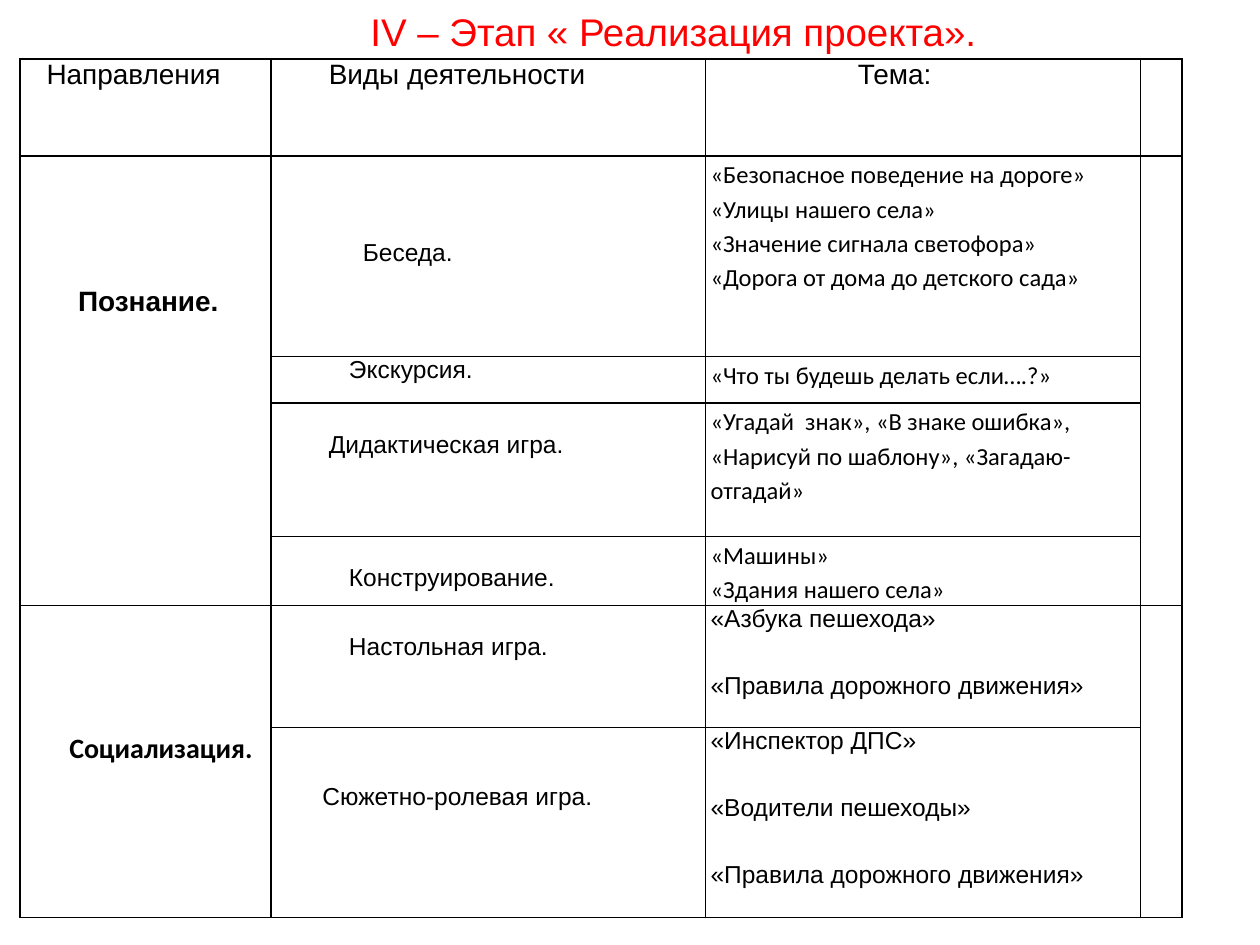
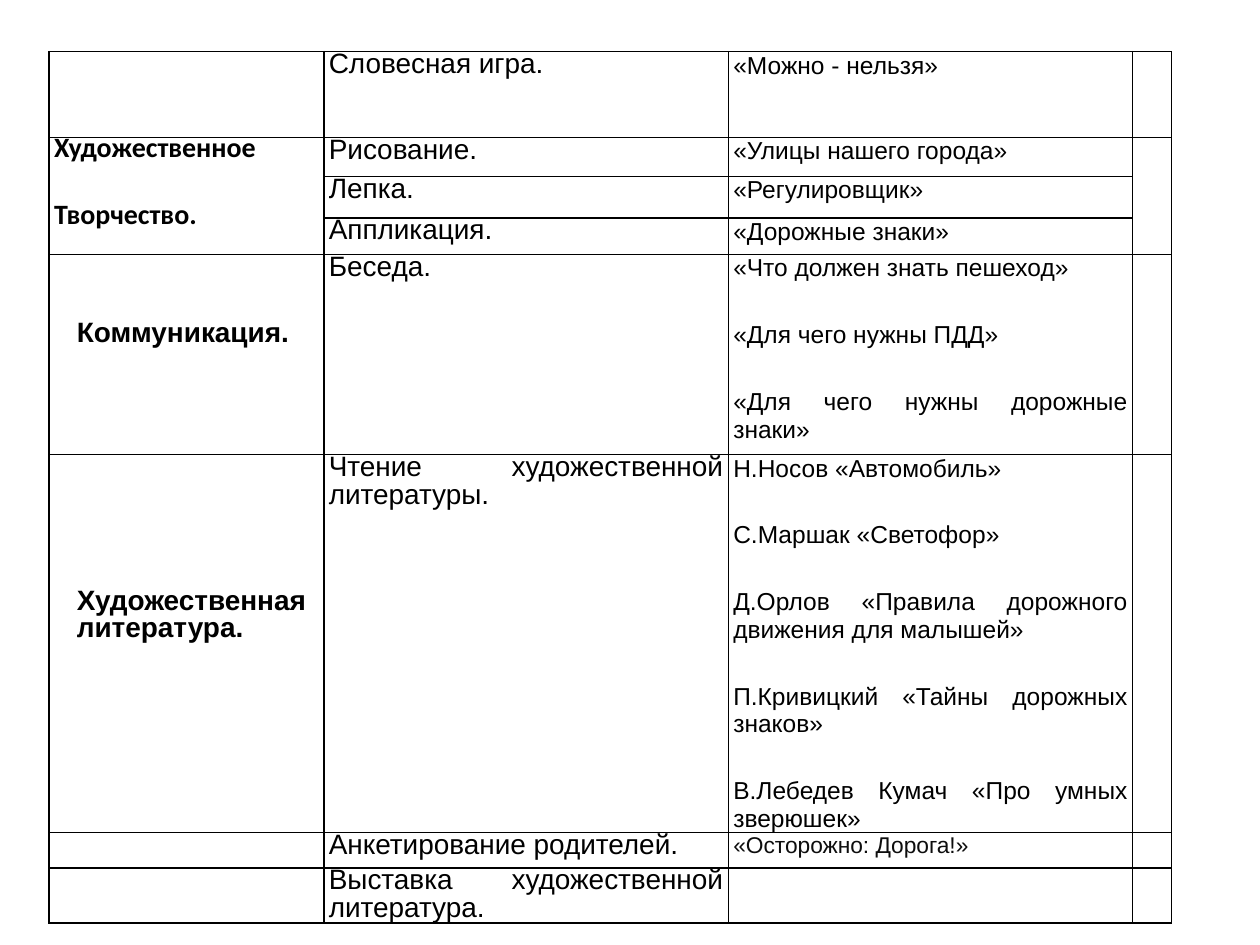
"""Build two slides that tabulate the activities of a road safety project."""
from lxml import etree
from pptx import Presentation, util as u
from pptx.dml.color import RGBColor
from pptx.enum import text
from pptx.oxml import ns

COLS, ROWS = 1000, 750
BLACK, RED, SOFT_BLACK = "000000", "FF0000", "0D0D0D"
JUSTIFY, LEFT = text.PP_ALIGN.JUSTIFY, text.PP_ALIGN.LEFT

EXACT = {"alignment": JUSTIFY, "line_spacing": u.Pt(15.8)}
GAPS = {"space_before": u.Pt(11.2), "space_after": u.Pt(11.2)}
LOOSE = {"alignment": JUSTIFY, **GAPS}
SPACED = {**EXACT, **GAPS}
LINES = {"alignment": LEFT, "line_spacing": 1.15}


def font(size, name="Arial", bold=False):
    return {"size": u.Pt(size), "name": name, "bold": bold}


STYLES = {
    "title": ({"alignment": LEFT}, font(22), RED),
    "head": (LOOSE, font(16), BLACK),
    "area": (SPACED, font(16, bold=True), BLACK),
    "area_calibri": (SPACED, font(16, "Calibri", True), BLACK),
    "activity": (EXACT, font(14), BLACK),
    "activity_big": (EXACT, font(16), BLACK),
    "activity_spaced": (SPACED, font(16), BLACK),
    "topic": (SPACED, font(14), BLACK),
    "topic_calibri": (LINES, font(14, "Calibri"), BLACK),
    "survey": (LOOSE, font(13), SOFT_BLACK),
}


def color(value):
    return RGBColor.from_string(value)


def put(target, values):
    for name, value in values.items():
        setattr(target, name, value)


class Deck:
    """Holds the presentation, its grid and the current slide."""

    def __init__(self):
        self.prs = Presentation()
        self.prs.slide_width, self.prs.slide_height = u.Inches(10), u.Inches(7.5)

    def x(self, cols):
        return round(self.prs.slide_width * cols / COLS)

    def y(self, rows):
        return round(self.prs.slide_height * rows / ROWS)

    def box(self, left, top, width, height):
        return self.x(left), self.y(top), self.x(width), self.y(height)

    def slide(self, layout):
        self.s = self.prs.slides.add_slide(self.prs.slide_layouts.get_by_name(layout))

    def add_lines(self, tf, style, lines):
        para, face, ink = STYLES[style]
        for i, line in enumerate(lines):
            p = tf.add_paragraph() if i else tf.paragraphs[0]
            put(p, para)
            r = p.add_run()
            r.text = line
            put(r.font, face)
            r.font.color.rgb = color(ink)

    def title(self, line, left, top, width, height, indent):
        sp = self.s.shapes.title
        put(sp, dict(zip(("left", "top", "width", "height"),
                         self.box(left, top, width, height))))
        tf = sp.text_frame
        put(tf, {"margin_left": self.x(indent), "margin_right": 0, "word_wrap": True,
                 "vertical_anchor": text.MSO_ANCHOR.MIDDLE})
        self.add_lines(tf, "title", [line])

    def border(self, cell):
        tc_pr = cell._tc.get_or_add_tcPr()
        for side in "LRTB":
            ln = etree.SubElement(tc_pr, ns.qn(f"a:ln{side}"), w=str(u.Pt(1)))
            fill = etree.SubElement(ln, ns.qn("a:solidFill"))
            etree.SubElement(fill, ns.qn("a:srgbClr"), val=BLACK)

    def cell(self, cell, style=None, lines=(), indent=0, drop=0):
        put(cell, {"margin_left": self.x(4 + indent), "margin_right": self.x(4),
                   "margin_top": self.y(drop), "margin_bottom": 0})
        self.border(cell)
        cell.fill.background()
        if style:
            self.add_lines(cell.text_frame, style, lines)
        else:
            end = cell.text_frame.paragraphs[0]._p.get_or_add_endParaRPr()
            end.set("sz", "800")

    def table(self, left, top, widths, rows, spans):
        heights = [height for height, *_ in rows]
        frame = self.s.shapes.add_table(len(rows), len(widths),
                                        *self.box(left, top, sum(widths), sum(heights)))
        tbl = frame.table
        put(tbl, {"first_row": False, "horz_banding": False})
        for column, width in zip(tbl.columns, widths):
            column.width = self.x(width)
        for i, (height, *cells) in enumerate(rows):
            tbl.rows[i].height = self.y(height)
            for j in range(len(widths)):
                self.cell(tbl.cell(i, j), *(cells[j] if j < len(cells) else ()))
        for first, last in spans:
            for j in (0, len(widths) - 1):
                tbl.cell(first, j).merge(tbl.cell(last, j))


STAGE_ROWS = [
    (77, ("head", ["Направления"], 17), ("head", ["Виды деятельности"], 42),
     ("head", ["Тема:"], 117)),
    (159, ("area", ["Познание."], 42, 106), ("activity", ["Беседа."], 69, 66),
     ("topic_calibri", ["«Безопасное поведение на дороге»", "«Улицы нашего села»",
                        "«Значение сигнала светофора»",
                        "«Дорога от дома до детского сада»"])),
    (37, (), ("activity", ["Экскурсия."], 58),
     ("topic_calibri", ["«Что ты будешь делать если….?»"])),
    (106, (), ("activity", ["Дидактическая игра."], 42, 22),
     ("topic_calibri", ["«Угадай  знак», «В знаке ошибка», "
                        "«Нарисуй по шаблону», «Загадаю- отгадай»"])),
    (52, (), ("activity", ["Конструирование."], 58, 22),
     ("topic_calibri", ["«Машины»", "«Здания нашего села»"])),
    (97, ("area_calibri", ["Социализация."], 35, 106),
     ("activity", ["Настольная игра."], 58, 22),
     ("topic", ["«Азбука пешехода»", "«Правила дорожного движения»"])),
    (151, (), ("activity", ["Сюжетно-ролевая игра."], 37, 44),
     ("topic", ["«Инспектор ДПС»", "«Водители пешеходы»",
                "«Правила дорожного движения»"])),
]

MORE_ROWS = [
    (68, (), ("activity_spaced", ["Словесная игра."]), ("topic", ["«Можно - нельзя»"])),
    (31, ("area_calibri", ["Художественное", "Творчество."]),
     ("activity_big", ["Рисование."]), ("topic", ["«Улицы нашего города»"])),
    (33, (), ("activity_big", ["Лепка."]), ("topic", ["«Регулировщик»"])),
    (29, (), ("activity_big", ["Аппликация."]), ("topic", ["«Дорожные знаки»"])),
    (159, ("area", ["Коммуникация."], 18, 53), ("activity_spaced", ["Беседа."]),
     ("topic", ["«Что должен знать пешеход»", "«Для чего нужны ПДД»",
                "«Для чего нужны дорожные знаки»"])),
    (291, ("area", ["Художественная литература."], 18, 106),
     ("activity_spaced", ["Чтение художественной литературы."]),
     ("topic", ["Н.Носов «Автомобиль»", "С.Маршак «Светофор»",
                "Д.Орлов «Правила дорожного движения для малышей»",
                "П.Кривицкий «Тайны дорожных знаков»",
                "В.Лебедев Кумач «Про умных зверюшек»"])),
    (28, (), ("activity_spaced", ["Анкетирование родителей."]),
     ("survey", ["«Осторожно: Дорога!»"])),
    (32, (), ("activity_spaced", ["Выставка художественной литература."])),
]


def main():
    deck = Deck()
    deck.slide("Title Only")
    deck.title("IV – Этап « Реализация проекта».", 208, 1, 584, 47, 86)
    deck.table(16, 47, [199, 345, 345, 33], STAGE_ROWS, [(1, 4), (5, 6)])
    deck.slide("Blank")
    deck.table(39, 41, [218, 321, 321, 31], MORE_ROWS, [(1, 3)])
    deck.prs.save("out.pptx")


if __name__ == "__main__":
    main()
